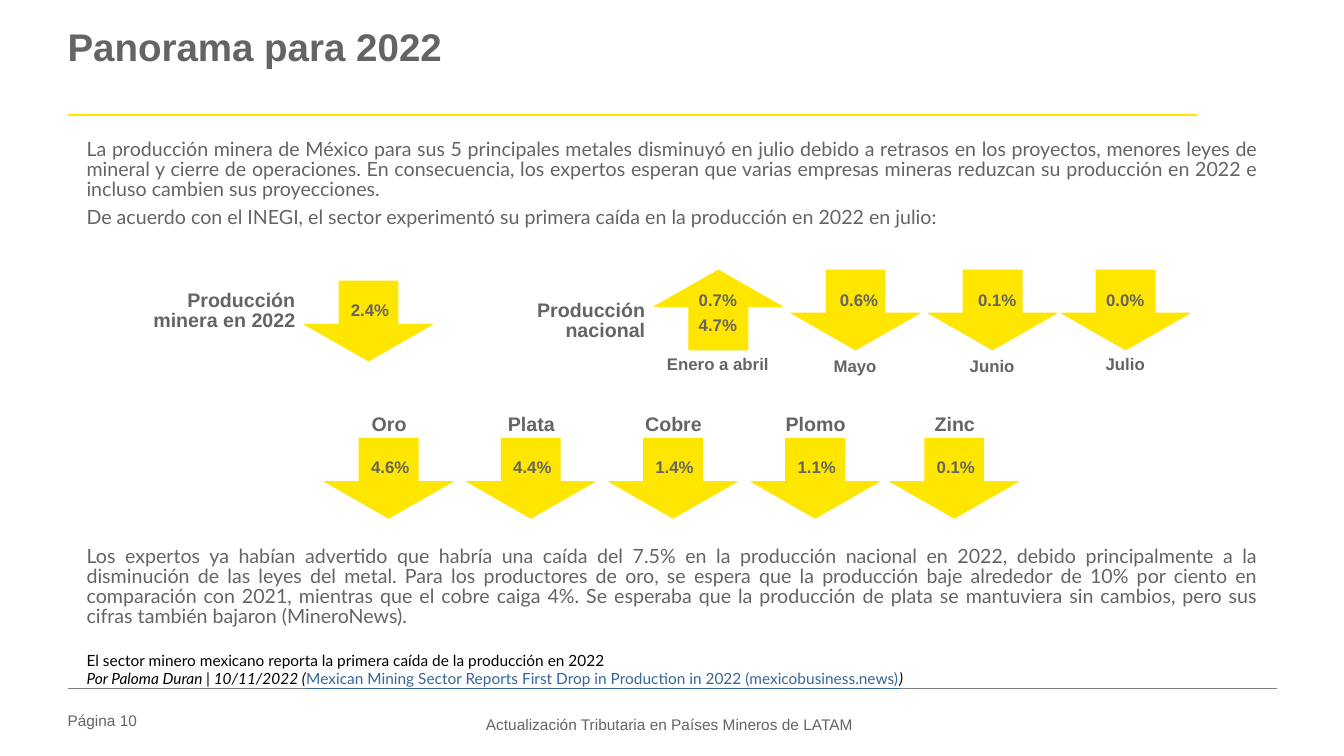
import pptx
import pptx.dml.color
import pptx.enum.shapes
import pptx.enum.text
import pptx.oxml
import pptx.oxml.ns
import pptx.util

Inches = pptx.util.Inches
Pt = pptx.util.Pt
ALIGN = pptx.enum.text.PP_ALIGN
FIT = pptx.enum.text.MSO_AUTO_SIZE
SHAPE = pptx.enum.shapes.MSO_SHAPE
GREY = "646464"
GOLD = "FFE600"
WIDE, HIGH = 1.27, 0.79
LABEL = 1.52

PLAIN = {"name": "Arial", "size": Pt(11)}
TITLE = {"name": "Arial", "size": Pt(27.5), "bold": True}
BODY = {"name": "Lato", "size": Pt(14)}
CITE = {"name": "Lato", "size": Pt(11)}
NAME = {"name": "Arial", "size": Pt(14), "bold": True}
VALUE = {"name": "Arial", "size": Pt(12), "bold": True}
TIGHT = {"line_spacing": 0.85}
SPACED = {"line_spacing": 0.85, "space_after": Pt(6)}


def tint(code):
    return pptx.dml.color.RGBColor.from_string(code)


def apply(item, form):
    for key, value in form.items():
        setattr(item, key, value)


def write(shapes, box, paras, font, para, inset=(0, 0, 0, 0), color=GREY, wrap=True):
    frame = shapes.add_textbox(*map(Inches, box)).text_frame
    sides = ("margin_left", "margin_top", "margin_right", "margin_bottom")
    apply(frame, dict(zip(sides, map(Inches, inset))))
    apply(frame, {"word_wrap": wrap, "auto_size": FIT.NONE})
    for spot, runs in enumerate(paras):
        line = frame.add_paragraph() if spot else frame.paragraphs[0]
        apply(line, para)
        for part in [(runs, {}, color)] if isinstance(runs, str) else runs:
            text, extra, shade = part
            run = line.add_run()
            run.text = text
            apply(run.font, {**font, **extra})
            run.font.color.rgb = tint(shade)


def rule(shapes, left, top, width, color, weight):
    ends = map(Inches, (left, top, left + width, top))
    line = shapes.add_connector(pptx.enum.shapes.MSO_CONNECTOR.STRAIGHT, *ends)
    line.line.color.rgb = tint(color)
    line.line.width = Pt(weight)
    props = line.element.find(pptx.oxml.ns.qn("p:spPr"))
    props.append(pptx.oxml.parse_xml(f'<a:effectLst {pptx.oxml.ns.nsdecls("a")}/>'))


def arrow(shapes, left, top, kind=SHAPE.DOWN_ARROW):
    box = map(Inches, (left, top, WIDE, HIGH))
    shape = shapes.add_shape(kind, *box)
    shape.shadow.inherit = False
    shape.adjustments[0], shape.adjustments[1] = 0.46, 0.459
    shape.fill.solid()
    shape.fill.fore_color.rgb = tint(GOLD)
    shape.line.color.rgb = tint(GOLD)
    shape.line.width = Pt(0.75)


def label(shapes, left, top, paras, font=VALUE, align=ALIGN.CENTER):
    high = 0.24 if font is NAME else 0.21
    form = {**SPACED, "alignment": align}
    write(shapes, (left, top, LABEL, high * len(paras)), paras, font, form, (0, 0.04, 0, 0))


def header(shapes, left, top, width):
    write(shapes, (left, top, width, 0.94), ["Panorama para 2022"], TITLE, TIGHT)
    rule(shapes, left, top + 0.84, width - 0.8, GOLD, 1.5)


def prose(shapes, left, top, width, height, paras):
    form = {**SPACED, "alignment": ALIGN.JUSTIFY}
    write(shapes, (left, top, width, height), paras, BODY, form, (0.1, 0.05, 0.1, 0.05))


def source(shapes, left, top, width):
    link = "Mexican Mining Sector Reports First Drop in Production in 2022 (mexicobusiness.news)"
    paras = [
        "El sector minero mexicano reporta la primera caída de la producción en 2022",
        [
            ("Por Paloma Duran | 10/11/2022 (", {"italic": True}, "000000"),
            (link, {"underline": True}, "336699"),
            (")", {"italic": True}, "000000"),
        ],
    ]
    form = {"alignment": ALIGN.JUSTIFY}
    write(shapes, (left, top, width, 0.47), paras, CITE, form, (0.1, 0.05, 0.1, 0.05), "000000")


def nation(shapes, left, top):
    label(shapes, left, top + 0.17, ["Producción minera en 2022"], NAME, ALIGN.RIGHT)
    arrow(shapes, left + 1.61, top + 0.11)
    label(shapes, left + 1.5, top + 0.28, ["2.4%"])
    label(shapes, left + 3.47, top + 0.27, ["Producción nacional"], NAME, ALIGN.RIGHT)
    months = [
        (5.08, "Enero a abril", ["0.7%", "4.7%"], -0.13, 0.82, SHAPE.UP_ARROW),
        (6.44, "Mayo", ["0.6%"], -0.09, 0.84, SHAPE.DOWN_ARROW),
        (7.8, "Junio", ["0.1%"], -0.08, 0.84, SHAPE.DOWN_ARROW),
        (9.12, "Julio", ["0.0%"], -0.13, 0.82, SHAPE.DOWN_ARROW),
    ]
    for step, month, rates, shift, drop, kind in months:
        spot = left + step
        arrow(shapes, spot, top, kind)
        label(shapes, spot + shift, top + 0.18, rates)
        label(shapes, spot - 0.13, top + drop, [month])


def metals(shapes, left, top):
    rates = [
        (0, "Oro", "4.6%"),
        (1.41, "Plata", "4.4%"),
        (2.82, "Cobre", "1.4%"),
        (4.23, "Plomo", "1.1%"),
        (5.61, "Zinc", "0.1%"),
    ]
    for step, metal, rate in rates:
        spot = left + step
        arrow(shapes, spot, top + 0.27)
        label(shapes, spot - 0.12, top, [metal], NAME)
        label(shapes, spot - 0.11, top + 0.44, [rate])


def footer(shapes, left, top, width):
    rule(shapes, left, top, width, "808080", 0.25)
    write(shapes, (left, top + 0.22, 0.97, 0.22), ["Página 10"], PLAIN, {})
    text = "Actualización Tributaria en Países Mineros de LATAM"
    write(shapes, (left + 4.15, top + 0.26, 3.7, 0.18), [text], PLAIN, {}, wrap=False)


def main():
    deck = pptx.Presentation()
    deck.slide_width, deck.slide_height = Inches(13.33), Inches(7.5)
    shapes = deck.slides.add_slide(deck.slide_layouts[6]).shapes
    footer(shapes, 0.67, 6.83, 12)
    header(shapes, 0.67, 0.3, 12)
    prose(shapes, 0.76, 1.34, 11.82, 1.05, [
        "La producción minera de México para sus 5 principales metales disminuyó en julio "
        "debido a retrasos en los proyectos, menores leyes de mineral y cierre de operaciones. "
        "En consecuencia, los expertos esperan que varias empresas mineras reduzcan su "
        "producción en 2022 e incluso cambien sus proyecciones.",
        "De acuerdo con el INEGI, el sector experimentó su primera caída en la producción "
        "en 2022 en julio:",
    ])
    prose(shapes, 0.76, 5.38, 11.82, 0.95, [
        "Los expertos ya habían advertido que habría una caída del 7.5% en la producción "
        "nacional en 2022, debido principalmente a la disminución de las leyes del metal. "
        "Para los productores de oro, se espera que la producción baje alrededor de 10% por "
        "ciento en comparación con 2021, mientras que el cobre caiga 4%. Se esperaba que la "
        "producción de plata se mantuviera sin cambios, pero sus cifras también bajaron "
        "(MineroNews).",
    ])
    source(shapes, 0.76, 6.41, 11.82)
    nation(shapes.add_group_shape().shapes, 1.41, 2.68)
    metals(shapes.add_group_shape().shapes, 3.22, 4.08)
    deck.save("out.pptx")


if __name__ == "__main__":
    main()
